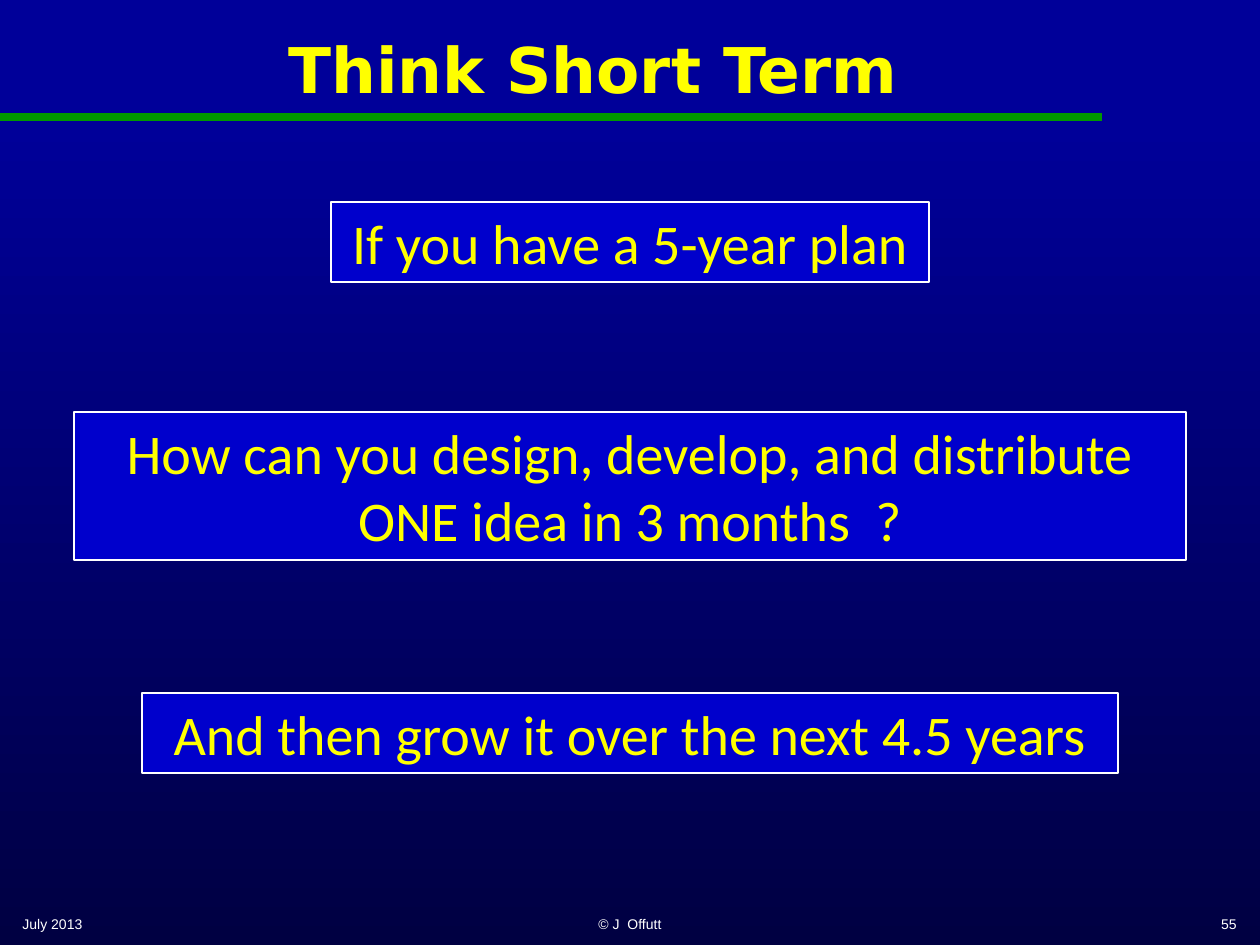
"""Builds the "Think Short Term" slide."""
from dataclasses import dataclass

from lxml import etree
from pptx import Presentation
from pptx import util as u
from pptx.dml.color import RGBColor
from pptx.enum import shapes, text
from pptx.oxml.ns import qn

PX_PER_INCH = 126
SLIDE_W, SLIDE_H = 1260, 945
YELLOW, WHITE, GREEN, BLUE = "FFFF00", "FFFFFF", "009900", "0000CC"
LEFT, CENTER, RIGHT = text.PP_ALIGN.LEFT, text.PP_ALIGN.CENTER, text.PP_ALIGN.RIGHT


@dataclass
class Message:
    """A framed statement centred across the slide."""
    words: str
    top: int
    width: int
    height: int


@dataclass
class Footer:
    """A small note along the bottom edge."""
    words: str
    left: int
    width: int
    align: text.PP_ALIGN


MESSAGES = [
    Message("If you have a 5-year plan", 202, 598, 80),
    Message("How can you design, develop, and distribute ONE idea in 3 months  ?", 412, 1112, 148),
    Message("And then grow it over the next 4.5 years", 693, 976, 80),
]
FOOTERS = [
    Footer("July 2013", 10, 262, LEFT),
    Footer("© J  Offutt", 431, 398, CENTER),
    Footer("55", 987, 262, RIGHT),
]


def px(length: int) -> u.Emu:
    """Turn pixels into EMU."""
    return u.Emu(round(length * 914400 / PX_PER_INCH))


def rgb(value: str) -> RGBColor:
    """Turn a hex string into a colour."""
    return RGBColor.from_string(value)


def write(shape, words: str, *, size: int, font: str, color: str, bold: bool = False,
          align=CENTER, anchor=text.MSO_ANCHOR.MIDDLE) -> None:
    """Put formatted text into a shape."""
    frame = shape.text_frame
    frame.word_wrap = True
    frame.vertical_anchor = anchor
    frame.text = words
    paragraph = frame.paragraphs[0]
    paragraph.alignment = align
    style = paragraph.runs[0].font
    style.size, style.name, style.bold = u.Pt(size), font, bold
    style.color.rgb = rgb(color)


def paint_background(slide) -> None:
    """Fill the background with a top-to-bottom gradient."""
    fill = slide.background.fill
    fill.gradient()
    fill.gradient_angle = 270
    for stop, position, color in zip(fill.gradient_stops, (0.13, 1), ("000099", "000042")):
        stop.position = position
        stop.color.rgb = rgb(color)


def draw_title(slide, words: str) -> None:
    """Place the title and the rule beneath it."""
    title = slide.shapes.title
    title.left, title.top, title.width, title.height = map(px, (21, 10, 1144, 116))
    write(title, words, size=36, font="DejaVu Sans", color=YELLOW, bold=True)
    rule = slide.shapes.add_connector(
        shapes.MSO_CONNECTOR.STRAIGHT, px(0), px(117), px(1102), px(117))
    rule.line.color.rgb = rgb(GREEN)
    rule.line.width = u.Pt(4.5)
    etree.SubElement(rule._element.spPr, qn("a:effectLst"))


def draw_message(slide, message: Message) -> None:
    """Draw one framed statement."""
    left = (SLIDE_W - message.width) // 2
    frame = slide.shapes.add_shape(
        shapes.MSO_SHAPE.RECTANGLE,
        px(left), px(message.top), px(message.width), px(message.height))
    frame.shadow.inherit = False
    frame.fill.solid()
    frame.fill.fore_color.rgb = rgb(BLUE)
    frame.line.color.rgb = rgb(WHITE)
    frame.line.width = u.Pt(1.5)
    write(frame, message.words, size=32, font="Calibri", color=YELLOW,
          anchor=text.MSO_ANCHOR.TOP)


def draw_footer(slide, footer: Footer) -> None:
    """Draw one footer note."""
    note = slide.shapes.add_textbox(px(footer.left), px(903), px(footer.width), px(42))
    write(note, footer.words, size=8, font="Arial", color=WHITE, align=footer.align)


def main() -> None:
    """Build and save the slide."""
    deck = Presentation()
    deck.slide_width, deck.slide_height = px(SLIDE_W), px(SLIDE_H)
    slide = deck.slides.add_slide(deck.slide_layouts[5])
    paint_background(slide)
    draw_title(slide, "Think Short Term")
    for footer in FOOTERS:
        draw_footer(slide, footer)
    for message in MESSAGES:
        draw_message(slide, message)
    deck.save("out.pptx")


if __name__ == "__main__":
    main()
